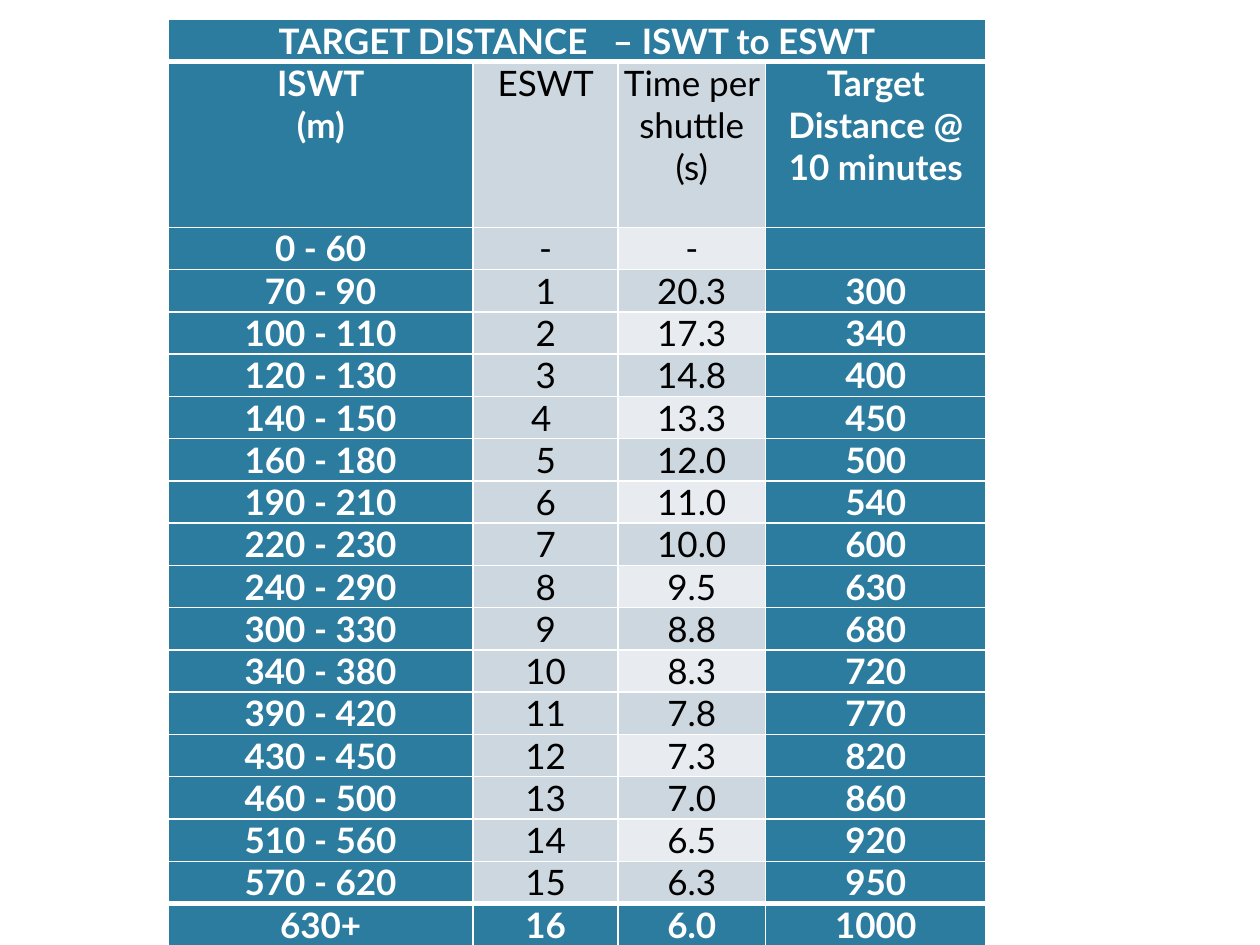
from pptx import Presentation
from pptx.dml.color import RGBColor
from pptx.enum.text import PP_ALIGN as Align
from pptx.oxml.ns import qn
from pptx.util import Cm, Pt
from lxml.etree import SubElement

TEAL = RGBColor(0x2C, 0x7C, 0x9F)
GREY = RGBColor(0xCD, 0xD7, 0xDF)
PALE = RGBColor(0xE8, 0xEC, 0xF0)
WHITE = RGBColor(0xFF, 0xFF, 0xFF)
BLACK = RGBColor(0, 0, 0)

HEADING = "TARGET DISTANCE   – ISWT to ESWT"
COLUMN_LABELS = ("ISWT\n(m)", "ESWT", "Time per shuttle (s)",
                 "Target Distance @ 10 minutes")
LEVELS = [
    ("0 - 60", "-", "-", ""),
    ("70 - 90", "1", "20.3", "300"),
    ("100 - 110", "2", "17.3", "340"),
    ("120 - 130", "3", "14.8", "400"),
    ("140 - 150", "4 ", "13.3", "450"),
    ("160 - 180", "5", "12.0", "500"),
    ("190 - 210", "6", "11.0", "540"),
    ("220 - 230", "7", "10.0", "600"),
    ("240 - 290", "8", "9.5", "630"),
    ("300 - 330", "9", "8.8", "680"),
    ("340 - 380", "10", "8.3", "720"),
    ("390 - 420", "11", "7.8", "770"),
    ("430 - 450", "12", "7.3", "820"),
    ("460 - 500", "13", "7.0", "860"),
    ("510 - 560", "14", "6.5", "920"),
    ("570 - 620", "15", "6.3", "950"),
    ("630+", "16", "6.0", "1000"),
]
ROWS = [(HEADING, "", "", ""), COLUMN_LABELS, *LEVELS]
LAST = len(ROWS) - 1
COLUMN_WIDTHS = (6.15, 2.92, 2.97, 4.45)
ROW_HEIGHT = 0.85
LABEL_HEIGHT = 3.34


def set_borders(cell, top, bottom):
    properties = cell._tc.get_or_add_tcPr()
    for side, width in (("L", 1), ("R", 1), ("T", top), ("B", bottom)):
        line = SubElement(properties, qn(f"a:ln{side}"), w=str(Pt(width)))
        fill = SubElement(line, qn("a:solidFill"))
        SubElement(fill, qn("a:srgbClr"), val=str(WHITE))


def fill_color(row, column):
    if row in (0, LAST) or column in (0, 3):
        return TEAL
    return PALE if column == 2 and row % 2 == 0 else GREY


def format_cell(cell, text, background):
    cell.fill.solid()
    cell.fill.fore_color.rgb = background
    cell.margin_left = cell.margin_right = Cm(0.1)
    cell.margin_top = cell.margin_bottom = 0
    cell.text = text
    for paragraph in cell.text_frame.paragraphs:
        paragraph.alignment = Align.CENTER
        font = paragraph.font
        font.name = "Lato"
        font.size = Pt(20)
        font.bold = background == TEAL
        font.color.rgb = WHITE if background == TEAL else BLACK


def add_distance_table(slide):
    height = LABEL_HEIGHT + LAST * ROW_HEIGHT
    table = slide.shapes.add_table(
        len(ROWS), len(COLUMN_WIDTHS), Cm(3.39), Cm(0.39),
        Cm(sum(COLUMN_WIDTHS)), Cm(height)).table
    table.first_row = table.horz_banding = False
    for column, width in zip(table.columns, COLUMN_WIDTHS):
        column.width = Cm(width)
    for r, texts in enumerate(ROWS):
        table.rows[r].height = Cm(LABEL_HEIGHT if r == 1 else ROW_HEIGHT)
        for c, text in enumerate(texts):
            cell = table.cell(r, c)
            set_borders(cell, 3 if r in (1, LAST) else 1,
                        3 if r in (0, LAST - 1) else 1)
            format_cell(cell, text, fill_color(r, c))
    table.cell(0, 0).merge(table.cell(0, 3))


def main():
    deck = Presentation()
    deck.slide_width, deck.slide_height = Cm(25.4), Cm(19.05)
    slide = deck.slides.add_slide(deck.slide_layouts[6])
    add_distance_table(slide)
    deck.save("out.pptx")


if __name__ == "__main__":
    main()
